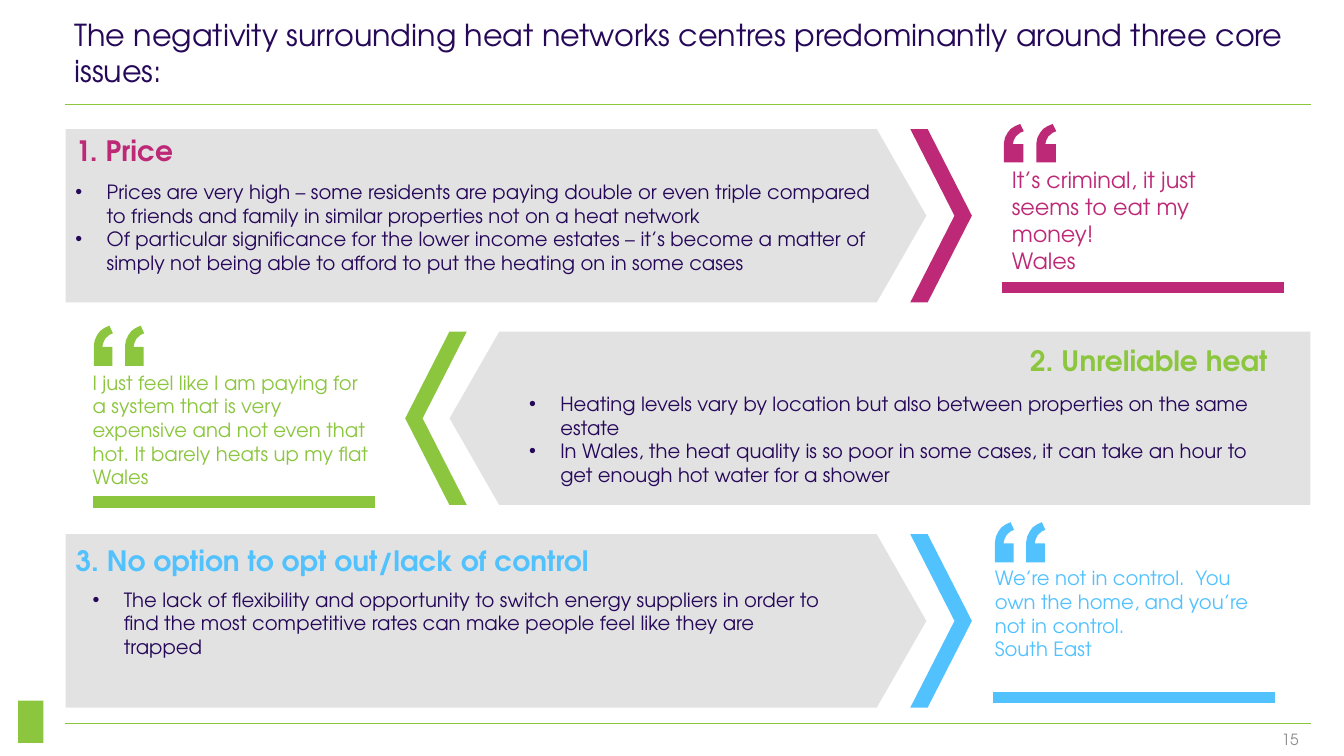
import dataclasses

import pptx
import pptx.dml.color
import pptx.enum.shapes
import pptx.enum.text
import pptx.oxml.ns
import pptx.util
from lxml import etree

SHAPES = pptx.enum.shapes.MSO_SHAPE
ANCHORS = pptx.enum.text.MSO_ANCHOR
ALIGNMENTS = pptx.enum.text.PP_ALIGN


@dataclasses.dataclass(frozen=True)
class Theme:
    font: str = "TeX Gyre Adventor"
    ink: str = "260859"
    grey: str = "8C8C8C"
    panel: str = "E3E2E3"
    pink: str = "BE2977"
    green: str = "8CC63F"
    blue: str = "52C2FF"
    title: float = 21.6
    heading: float = 20
    large_quote: float = 16
    body: float = 14
    number: float = 11
    hairline: float = 0.5
    bar: float = 8


QUOTE_MARK = [
    (37, 100), (0, 100), (0, 67), (0.5, 50), (2, 36), (7, 23), (13, 13), (21, 6),
    (31, 0), (38, 19), (31, 23), (23, 32), (19, 42), (17, 53), (37, 53),
]


class SlideBuilder:
    """Draws styled elements on a slide with a grid of 100 columns and 100 rows."""

    def __init__(self, presentation, theme):
        self.theme = theme
        self.slide = presentation.slides.add_slide(presentation.slide_layouts[6])
        self.column = presentation.slide_width / 100
        self.row = presentation.slide_height / 100

    def place(self, left, top, width, height):
        return (round(left * self.column), round(top * self.row),
                round(width * self.column), round(height * self.row))

    def paint(self, shape, color):
        shape.shadow.inherit = False
        shape.fill.solid()
        shape.fill.fore_color.rgb = pptx.dml.color.RGBColor.from_string(color)
        shape.line.fill.background()

    def shape(self, kind, area, color, adjustment=None, mirrored=False):
        shape = self.slide.shapes.add_shape(kind, *self.place(*area))
        if adjustment is not None:
            shape.adjustments[0] = adjustment
        if mirrored:
            shape.rotation = 180
        self.paint(shape, color)
        return shape

    def line(self, left, top, width, color, weight):
        start, level, length, _ = self.place(left, top, width, 0)
        connector = self.slide.shapes.add_connector(
            pptx.enum.shapes.MSO_CONNECTOR.STRAIGHT, start, level, start + length, level)
        connector.line.color.rgb = pptx.dml.color.RGBColor.from_string(color)
        connector.line.width = pptx.util.Pt(weight)
        properties = connector._element.spPr
        etree.SubElement(properties, pptx.oxml.ns.qn("a:effectLst"))

    def quote_mark(self, left, top, width, height):
        x, y, wide, high = self.place(left, top, width, height)
        first, second = QUOTE_MARK, [(px + 62, py) for px, py in QUOTE_MARK]
        builder = self.slide.shapes.build_freeform(*first[0], scale=(wide / 100, high / 100))
        builder.add_line_segments(first[1:], close=True)
        builder.move_to(*second[0])
        builder.add_line_segments(second[1:], close=True)
        return builder.convert_to_shape(x, y)

    def fill_frame(self, frame, lines, size, color, bold=False, bulleted=False,
                   alignment=ALIGNMENTS.LEFT):
        frame.word_wrap = True
        for index, line in enumerate(lines):
            paragraph = frame.paragraphs[0] if index == 0 else frame.add_paragraph()
            paragraph.text = line
            paragraph.alignment = alignment
            if bulleted:
                properties = paragraph._p.get_or_add_pPr()
                indent = pptx.util.Inches(0.31)
                properties.set("marL", str(indent))
                properties.set("indent", str(-indent))
                etree.SubElement(properties, pptx.oxml.ns.qn("a:buFont"), typeface="Arial")
                etree.SubElement(properties, pptx.oxml.ns.qn("a:buChar"), char="•")
            paragraph.font.name = self.theme.font
            paragraph.font.size = pptx.util.Pt(size)
            paragraph.font.bold = bold
            paragraph.font.color.rgb = pptx.dml.color.RGBColor.from_string(color)

    def text(self, area, lines, size, color, anchor=ANCHORS.TOP, **style):
        box = self.slide.shapes.add_textbox(*self.place(*area))
        box.text_frame.vertical_anchor = anchor
        self.fill_frame(box.text_frame, lines, size, color, **style)

    def panel(self, index, color, mirrored):
        top, height = 17.07 + 26.8 * index, 22.93
        panel_left, chevron_left = (33.45, 30.15) if mirrored else (4.88, 67.73)
        panel = self.shape(SHAPES.PENTAGON, (panel_left, top, 64.05, height),
                           self.theme.panel, 0.286, mirrored)
        self.shape(SHAPES.CHEVRON, (chevron_left, top, 4.58, height), color, 0.718, mirrored)
        return panel

    def quote(self, mark_area, text_area, bar_left, bar_top, lines, size, color):
        self.paint(self.quote_mark(*mark_area), color)
        self.line(bar_left, bar_top, 21, color, self.theme.bar)
        self.text(text_area, lines, size, color)


def main():
    theme = Theme()
    presentation = pptx.Presentation()
    presentation.slide_width = pptx.util.Inches(13.33)
    presentation.slide_height = pptx.util.Inches(7.5)
    builder = SlideBuilder(presentation, theme)

    for rule_top in (13.8, 95.73):
        builder.line(4.8, rule_top, 92.78, theme.green, theme.hairline)
    builder.shape(SHAPES.RECTANGLE, (1.35, 92.67, 1.88, 5.6), theme.green)
    builder.text((89.33, 95.87, 8.03, 3.6), ["15"], theme.number, theme.grey,
                 alignment=ALIGNMENTS.RIGHT)
    builder.text(
        (4.8, 1.47, 95.2, 10.93),
        ["The negativity surrounding heat networks centres predominantly around three core issues:"],
        theme.title, theme.ink, anchor=ANCHORS.BOTTOM)

    price_panel = builder.panel(0, theme.pink, mirrored=False)
    builder.panel(1, theme.green, mirrored=True)
    builder.panel(2, theme.blue, mirrored=False)

    price_frame = price_panel.text_frame
    price_frame.vertical_anchor = ANCHORS.MIDDLE
    price_frame.margin_top = pptx.util.Inches(0.28)
    builder.fill_frame(price_frame, [
        "Prices are very high – some residents are paying double or even triple compared "
        "to friends and family in similar properties not on a heat network",
        "Of particular significance for the lower income estates – it’s become a matter of "
        "simply not being able to afford to put the heating on in some cases",
    ], theme.body, theme.ink, bulleted=True)
    builder.text((38.63, 51.2, 56.33, 17.47), [
        "Heating levels vary by location but also between properties on the same estate",
        "In Wales, the heat quality is so poor in some cases, it can take an hour to "
        "get enough hot water for a shower",
    ], theme.body, theme.ink, bulleted=True)
    builder.text((6.15, 77.07, 56.33, 14.4), [
        "The lack of flexibility and opportunity to switch energy suppliers in order to "
        "find the most competitive rates can make people feel like they are trapped",
    ], theme.body, theme.ink, bulleted=True)

    headings = [
        ((4.88, 17.07, 36.3, 5.87), "1. Price", theme.pink),
        ((75.9, 44.8, 21.75, 5.87), "2. Unreliable heat", theme.green),
        ((4.88, 71.2, 43.65, 5.87), "3. No option to opt out/lack of control", theme.blue),
    ]
    for area, heading, color in headings:
        builder.text(area, [heading], theme.heading, color, bold=True)

    builder.quote((74.7, 16.4, 3.9, 5.07), (74.55, 21.33, 20.03, 15.73), 74.55, 38,
                  ["It’s criminal, it just seems to eat my money!", "Wales"],
                  theme.large_quote, theme.pink)
    builder.quote((6.98, 43.07, 3.75, 5.33), (6.15, 48.4, 22.35, 17.07), 6.9, 66.4,
                  ["I just feel like I am paying for a system that is very expensive and "
                   "not even that hot. It barely heats up my flat", "Wales"],
                  theme.body, theme.green)
    builder.quote((74.03, 69.07, 3.75, 5.33), (73.28, 74.27, 22.35, 13.87), 73.88, 92.27,
                  ["We’re not in control.  You own the home, and you’re not in control.",
                   "South East"],
                  theme.body, theme.blue)

    presentation.save("out.pptx")


if __name__ == "__main__":
    main()
